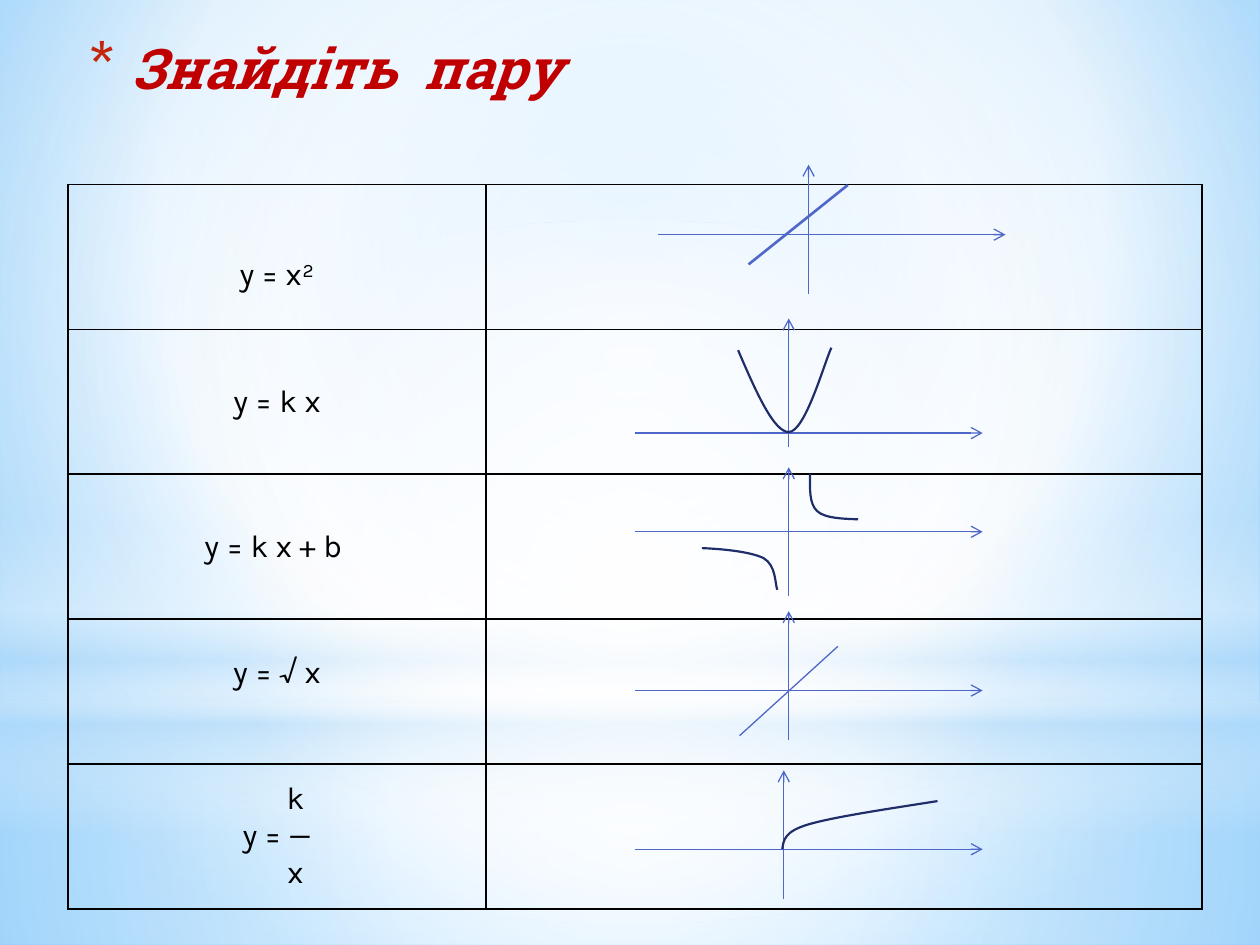
from dataclasses import dataclass

from lxml import etree
from pptx import Presentation
from pptx import util as u
from pptx.dml.color import RGBColor
from pptx.enum import shapes, text
from pptx.oxml.ns import qn


@dataclass(frozen=True)
class Theme:
    title_font: str = "Roboto Slab"
    body_font: str = "Karla"
    title_size: int = 32
    body_size: int = 18
    title: str = "C00000"
    bullet: str = "C3260C"
    ink: str = "000000"
    axis: str = "4E67C8"
    curve: str = "1F2E69"
    mist: str = "B4DCFA"
    white: str = "FFFFFF"
    sky: str = "9ED5FF"
    deep_sky: str = "5BB9FF"


def child(parent, tag, **attributes):
    element = etree.SubElement(parent, qn(tag))
    for name, value in attributes.items():
        element.set(name, str(value))
    return element


class Builder:
    def __init__(self, slide, theme):
        self.slide, self.theme = slide, theme

    def gradient(self, solid, stops, center=None, angle=None):
        """Replace a solid fill by stops of (position, colour, opacity)."""
        fill = etree.Element(qn("a:gradFill"), rotWithShape="1")
        stop_list = child(fill, "a:gsLst")
        for position, color, opacity in stops:
            stop = child(stop_list, "a:gs", pos=position * 1000)
            rgb = child(stop, "a:srgbClr", val=color)
            if opacity < 100:
                child(rgb, "a:alpha", val=opacity * 1000)
        if center:
            path = child(fill, "a:path", path="circle")
            child(path, "a:fillToRect", **{k: v * 1000 for k, v in zip("ltrb", center)})
        else:
            child(fill, "a:lin", ang=angle * 60000, scaled=0)
        solid.getparent().replace(solid, fill)

    def background(self, stops, center):
        self.slide.background.fill.solid()
        self.gradient(self.slide.element.xpath(".//p:bgPr/a:solidFill")[0], stops, center)

    def glow(self, kind, top, height, stops, center=None, angle=None):
        """Add a soft light area to the slide master, below its placeholders."""
        band = self.slide.shapes.add_shape(kind, 0, u.Cm(top), u.Cm(25.4), u.Cm(height))
        band.shadow.inherit = False
        band.line.fill.background()
        band.fill.solid()
        self.gradient(band.element.xpath("./p:spPr/a:solidFill")[0], stops, center, angle)
        master = self.slide.slide_layout.slide_master
        master.placeholders[0].element.addprevious(band.element)

    def run(self, paragraph, words, font, size, color, bold=False, italic=False):
        run = paragraph.add_run()
        run.text = words
        run.font.name, run.font.size = font, u.Pt(size)
        run.font.bold, run.font.italic = bold, italic
        run.font.color.rgb = RGBColor.from_string(color)

    def title(self, words):
        heading = self.slide.shapes.title
        heading.left, heading.top = u.Cm(1.5), u.Cm(0.55)
        heading.width, heading.height = u.Cm(22.6), u.Cm(2.77)
        frame = heading.text_frame
        frame.auto_size = text.MSO_AUTO_SIZE.NONE
        frame.vertical_anchor = text.MSO_ANCHOR.TOP
        paragraph = frame.paragraphs[0]
        paragraph.alignment = text.PP_ALIGN.JUSTIFY
        props = paragraph._p.get_or_add_pPr()
        props.set("marL", str(u.Cm(0.89)))
        props.set("indent", str(-u.Cm(0.89)))
        child(child(props, "a:buClr"), "a:srgbClr", val=self.theme.bullet)
        child(props, "a:buSzPct", val=128000)
        child(props, "a:buFont", typeface=self.theme.body_font)
        child(props, "a:buChar", char="*")
        self.run(paragraph, words, self.theme.title_font, self.theme.title_size,
                 self.theme.title, bold=True, italic=True)

    def table(self, formulas):
        grid = self.slide.shapes.add_table(len(formulas), 2, u.Cm(1.37), u.Cm(3.72),
                                           u.Cm(22.86), u.Cm(14.6)).table
        grid.first_row = grid.horz_banding = False
        for column, width in zip(grid.columns, (8.43, 14.43)):
            column.width = u.Cm(width)
        for row, lines in enumerate(formulas):
            grid.rows[row].height = u.Cm(2.92)
            for column in (0, 1):
                self.border(grid.cell(row, column))
            cell = grid.cell(row, 0)
            cell.vertical_anchor = text.MSO_ANCHOR.MIDDLE
            for number, (words, indent) in enumerate(lines):
                frame = cell.text_frame
                paragraph = frame.add_paragraph() if number else frame.paragraphs[0]
                paragraph.alignment = text.PP_ALIGN.CENTER
                if indent:
                    paragraph._p.get_or_add_pPr().set("marL", str(u.Cm(indent)))
                self.run(paragraph, words, self.theme.body_font, self.theme.body_size,
                         self.theme.ink)
        grid.cell(0, 0).margin_top = u.Cm(0.87)  # first formula sits lower
        grid.cell(3, 0).margin_bottom = u.Cm(0.89)  # root formula sits higher

    def border(self, cell):
        props = cell._tc.get_or_add_tcPr()
        for side in ("a:lnL", "a:lnR", "a:lnT", "a:lnB"):
            edge = child(props, side, w=u.Pt(1))
            child(child(edge, "a:solidFill"), "a:srgbClr", val=self.theme.ink)
        cell.fill.background()

    def line(self, start, end, width=0.75, arrow=False):
        stroke = self.slide.shapes.add_connector(
            shapes.MSO_CONNECTOR.STRAIGHT, *(u.Cm(v) for v in (*start, *end)))
        stroke.line.color.rgb = RGBColor.from_string(self.theme.axis)
        stroke.line.width = u.Pt(width)
        if arrow:
            child(stroke.element.xpath(".//a:ln")[0], "a:tailEnd", type="arrow")
        child(stroke.element.spPr, "a:effectLst")

    def axes(self, left, level, center, bottom):
        self.line((left, level), (left + 7.01, level), arrow=True)
        self.line((center, bottom), (center, bottom - 2.6), arrow=True)

    def curve(self, *points):
        """Draw a start point followed by cubic segments of three points each."""
        points = [(u.Cm(x), u.Cm(y)) for x, y in points]
        outline = self.slide.shapes.build_freeform(*points[0])
        outline.add_line_segments(points[1:], close=False)
        graph = outline.convert_to_shape()
        steps = graph.element.xpath(".//a:path/a:lnTo")
        for first in range(0, len(steps), 3):
            bend = etree.Element(qn("a:cubicBezTo"))
            steps[first].addprevious(bend)
            for step in steps[first:first + 3]:
                bend.append(step[0])
                step.getparent().remove(step)
        graph.shadow.inherit = False
        graph.fill.background()
        graph.line.color.rgb = RGBColor.from_string(self.theme.curve)
        graph.line.width = u.Pt(1.25)


def main():
    deck = Presentation()
    deck.slide_width, deck.slide_height = u.Cm(25.4), u.Cm(19.05)
    theme = Theme()
    page = Builder(deck.slides.add_slide(deck.slide_layouts[5]), theme)
    white, mist = theme.white, theme.mist
    middle = (50, 50, 50, 50)
    rectangle, oval = shapes.MSO_SHAPE.RECTANGLE, shapes.MSO_SHAPE.OVAL

    # Sky backdrop
    page.background([(0, theme.sky, 100), (60, white, 100), (100, theme.deep_sky, 100)],
                    (20, 10, 20, 60))
    page.glow(rectangle, 14.17, 4.88, [(0, white, 91), (37, white, 76), (100, mist, 79)], middle)
    page.glow(rectangle, 0, 14.17, [(0, white, 89), (48, white, 62), (100, mist, 79)], middle)
    page.glow(rectangle, 10.46, 6.35, [(0, white, 0), (29, white, 30), (45, mist, 40),
                                       (55, white, 26), (65, mist, 60), (100, white, 0)], angle=90)
    page.glow(oval, 4.45, 14.17, [(0, white, 100), (56, white, 0)], middle)

    # Title and formulas, each line with its indent
    page.title("Знайдіть  пару  ")
    page.table([[("y = x²", 0)], [("y = k x", 0)], [("y = k x + b ", 0)], [("y = √ x", 0)],
                [("k", 0.74), ("y = —", 0), ("x", 0.74)]])

    # Coordinate axes, one pair per row
    for left, level, center, bottom in ((13.26, 4.73, 16.3, 5.92), (12.8, 8.73, 15.9, 9.02),
                                        (12.8, 10.72, 15.9, 12.02), (12.8, 13.92, 15.9, 14.92),
                                        (12.8, 17.12, 15.8, 18.13)):
        page.axes(left, level, center, bottom)

    # Linear graphs
    page.line((17.09, 3.73), (15.09, 5.33), width=1.5)
    page.line((16.89, 13.03), (14.91, 14.83))

    # Parabola, two hyperbola branches, square root
    page.curve((14.88, 7.06), (15.24, 7.9), (15.6, 8.71), (15.9, 8.71),
               (16.23, 8.71), (16.61, 7.34), (16.76, 7.01))
    page.curve((16.33, 9.55), (16.33, 9.86), (16.31, 10.16), (16.48, 10.31),
               (16.64, 10.46), (17.09, 10.46), (17.3, 10.47))
    page.curve((14.15, 11.05), (14.63, 11.07), (15.14, 11.13), (15.39, 11.25),
               (15.65, 11.4), (15.62, 11.76), (15.67, 11.89))
    page.curve((15.77, 17.12), (15.8, 16.94), (15.8, 16.76), (16.33, 16.61),
               (16.87, 16.46), (17.88, 16.31), (18.9, 16.15))

    deck.save("out.pptx")


if __name__ == "__main__":
    main()
